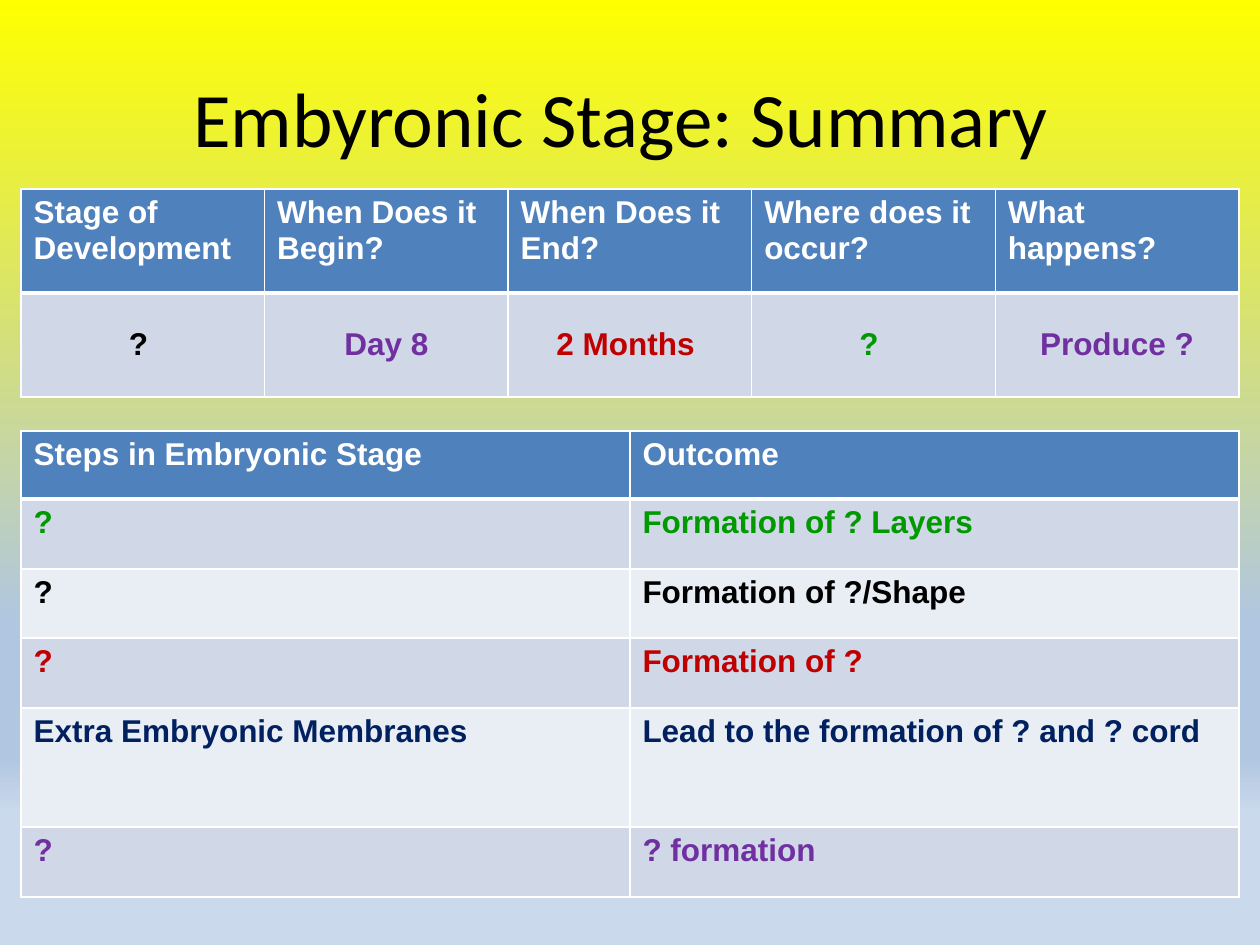
from lxml import etree
from pptx import Presentation
from pptx.dml.color import RGBColor
from pptx.enum.text import MSO_ANCHOR, PP_ALIGN
from pptx.oxml.ns import qn
from pptx.util import Pt

PX = 914400 / 126
CENTER, LEFT = PP_ALIGN.CENTER, PP_ALIGN.LEFT
MIDDLE, TOP = MSO_ANCHOR.MIDDLE, MSO_ANCHOR.TOP

BLACK = RGBColor(0x00, 0x00, 0x00)
WHITE = RGBColor(0xFF, 0xFF, 0xFF)
BLUE = RGBColor(0x4F, 0x81, 0xBD)
BAND_DARK = RGBColor(0xD0, 0xD8, 0xE8)
BAND_LIGHT = RGBColor(0xE9, 0xED, 0xF4)
PURPLE = RGBColor(0x70, 0x30, 0xA0)
RED = RGBColor(0xC0, 0x00, 0x00)
GREEN = RGBColor(0x00, 0x99, 0x00)
NAVY = RGBColor(0x00, 0x20, 0x60)
YELLOW = RGBColor(0xFF, 0xFF, 0x00)
SKY = RGBColor(0xB0, 0xC6, 0xE1)
PALE = RGBColor(0xCA, 0xD9, 0xEB)


def px(n):
    return round(n * PX)


def add_border(cell, side, width):
    ln = etree.SubElement(cell._tc.get_or_add_tcPr(), qn(f"a:ln{side}"), w=str(Pt(width)))
    fill = etree.SubElement(ln, qn("a:solidFill"))
    etree.SubElement(fill, qn("a:srgbClr"), val=str(WHITE))


prs = Presentation()
prs.slide_width, prs.slide_height = px(1260), px(945)
s = prs.slides.add_slide(prs.slide_layouts[5])

bg = s.background.fill
bg.gradient()
bg.gradient_angle = 270
stops = s.element.find(".//" + qn("a:gsLst"))
for gs in list(stops):
    stops.remove(gs)
for pos, color in [(0, YELLOW), (66, SKY), (80, SKY), (86, PALE)]:
    gs = etree.SubElement(stops, qn("a:gs"), pos=str(pos * 1000))
    etree.SubElement(gs, qn("a:srgbClr"), val=str(color))

title = s.shapes.title
for name, value in {"left": 63, "top": 38, "width": 1134, "height": 157}.items():
    setattr(title, name, px(value))
tf = title.text_frame
tf.vertical_anchor = MIDDLE
p = tf.paragraphs[0]
p.alignment = CENTER
r = p.add_run()
r.text = "Embyronic Stage: Summary "
for name, value in {"size": Pt(44), "name": "Calibri"}.items():
    setattr(r.font, name, value)
r.font.color.rgb = BLACK

summary_rows = [
    ["Stage of Development", "When Does it Begin?", "When Does it End?",
     "Where does it occur?", "What happens?"],
    ["? ", "Day 8", "2 Months ", "? ", "Produce ?"],
]
step_rows = [
    ["Steps in Embryonic Stage", "Outcome"],
    ["?", "Formation of ? Layers"],
    ["?", "Formation of ?/Shape"],
    ["?", "Formation of ?"],
    ["Extra Embryonic Membranes", "Lead to the formation of ? and ? cord"],
    ["?", "? formation"],
]
summary_colors = [[WHITE] * 5, [BLACK, PURPLE, RED, GREEN, PURPLE]]
step_colors = [[c] * 2 for c in (WHITE, GREEN, BLACK, RED, NAVY, PURPLE)]
tables = [
    (189, [104, 104], summary_rows, summary_colors, CENTER, MIDDLE),
    (431, [68, 70, 69, 70, 119, 70], step_rows, step_colors, LEFT, TOP),
]

for top, heights, rows, colors, align, anchor in tables:
    n_cols = len(rows[0])
    table = s.shapes.add_table(len(rows), n_cols, px(21), px(top),
                               px(1218), px(sum(heights))).table
    for col in table.columns:
        col.width = px(1218 / n_cols)
    for i, texts in enumerate(rows):
        table.rows[i].height = px(heights[i])
        for j, text in enumerate(texts):
            cell = table.cell(i, j)
            for side in "LRTB":
                thick = (i, side) in [(0, "B"), (1, "T")]
                add_border(cell, side, 3 if thick else 1)
            cell.fill.solid()
            cell.fill.fore_color.rgb = BLUE if i == 0 else BAND_DARK if i % 2 else BAND_LIGHT
            cell.vertical_anchor = anchor if i else TOP
            p = cell.text_frame.paragraphs[0]
            p.alignment = align if i else LEFT
            r = p.add_run()
            r.text = text
            for name, value in {"size": Pt(18), "name": "Arial", "bold": True}.items():
                setattr(r.font, name, value)
            r.font.color.rgb = colors[i][j]

prs.save("out.pptx")
